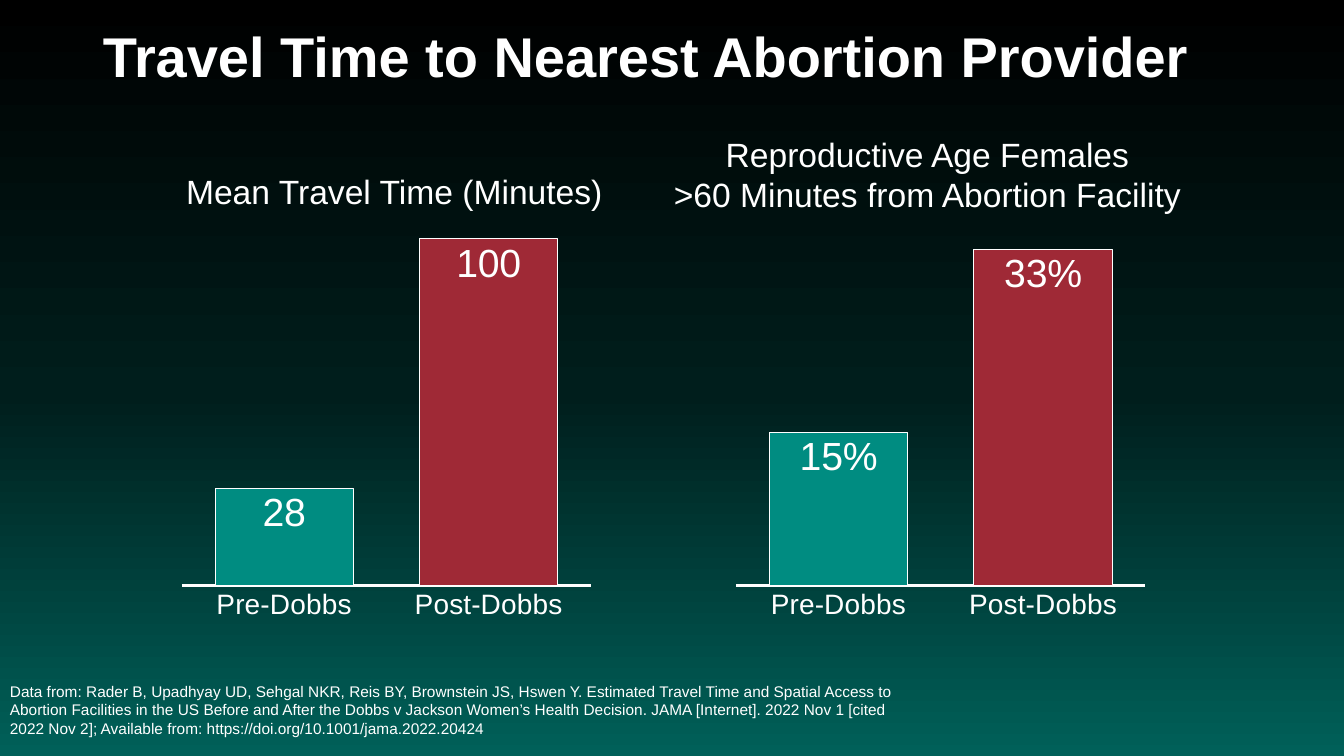
from copy import deepcopy
from lxml import etree
from pptx import Presentation
from pptx.chart.data import CategoryChartData
from pptx.dml.color import RGBColor
from pptx.enum import chart as ch, text as tx
from pptx.oxml import ns
from pptx.util import Cm, Pt

FONT, WHITE = "Arial", "FFFFFF"
BACKGROUND = [(0, "000000"), (0.52, "001E1C"), (1, "006059")]
TITLE = "Travel Time to Nearest Abortion Provider"
SOURCE = (
    "Data from: Rader B, Upadhyay UD, Sehgal NKR, Reis BY, Brownstein JS, Hswen Y. "
    "Estimated Travel Time and Spatial Access to Abortion Facilities in the US Before "
    "and After the Dobbs v Jackson Women’s Health Decision. JAMA [Internet]. 2022 Nov 1 "
    "[cited 2022 Nov 2]; Available from: https://doi.org/10.1001/jama.2022.20424"
)
CATEGORIES = ["Pre-Dobbs", "Post-Dobbs"]
BAR_COLOURS = ["008C81", "9F2936"]
# Boxes are left, top, width, height in centimetres
CHARTS = [
    dict(left=4.37, values=[28, 100], top_value=100, step=20, number_format="General",
         heading="Mean Travel Time (Minutes)", heading_box=(4.37, 4.17, 11.13, 1.27)),
    dict(left=18.34, values=[0.15, 0.33], top_value=0.34, step=0.05, number_format="0%",
         heading="Reproductive Age Females\n>60 Minutes from Abortion Facility",
         heading_box=(16.51, 3.25, 13.72, 2.31)),
]
CHART_TOP, CHART_WIDTH, CHART_HEIGHT = 5.82, 10.74, 10.03
PLOT = {"x": 0.02, "y": 0.02, "w": 0.96, "h": 0.87}


def colour(value):
    return RGBColor.from_string(value)


def style_font(font, size, bold=False):
    font.name, font.size, font.bold = FONT, Pt(size), bold
    font.color.rgb = colour(WHITE)


def fill_text(box, content, size, align, anchor, wrap=True, bold=False):
    frame = box.text_frame
    frame.text = content
    frame.word_wrap = wrap
    frame.auto_size = tx.MSO_AUTO_SIZE.NONE
    frame.vertical_anchor = anchor
    for para in frame.paragraphs:
        para.alignment = align
        for span in para.runs:
            style_font(span.font, size, bold)


def add_text(slide, place, *args, **kwargs):
    box = slide.shapes.add_textbox(*map(Cm, place))
    fill_text(box, *args, **kwargs)


def paint_background(slide):
    fill = slide.background.fill
    fill.gradient()
    fill.gradient_angle = 270
    stop_list = slide.element.xpath(".//a:gsLst")[0]
    stop_list.insert(1, deepcopy(stop_list[0]))
    for stop, (position, value) in zip(fill.gradient_stops, BACKGROUND):
        stop.position = position
        stop.color.rgb = colour(value)


def fix_plot_area(chart):
    """Pin the inner plot area to the fractions in PLOT."""
    area = chart.element.xpath(".//c:plotArea")[0]
    for old in area.findall(ns.qn("c:layout")):
        area.remove(old)
    layout = etree.Element(ns.qn("c:layout"))
    manual = etree.SubElement(layout, ns.qn("c:manualLayout"))
    settings = {"layoutTarget": "inner", "xMode": "edge", "yMode": "edge", **PLOT}
    for name, value in settings.items():
        etree.SubElement(manual, ns.qn(f"c:{name}")).set("val", str(value))
    area.insert(0, layout)


def add_bar_chart(slide, item):
    data = CategoryChartData(number_format=item["number_format"])
    data.categories = CATEGORIES
    data.add_series("Series 1", item["values"])
    place = (item["left"], CHART_TOP, CHART_WIDTH, CHART_HEIGHT)
    chart = slide.shapes.add_chart(
        ch.XL_CHART_TYPE.COLUMN_CLUSTERED, *map(Cm, place), data).chart
    chart.has_legend = chart.has_title = False
    style_font(chart.font, 20)
    fix_plot_area(chart)

    values = chart.value_axis
    values.minimum_scale, values.maximum_scale = 0, item["top_value"]
    values.major_unit = item["step"]
    values.has_major_gridlines = values.visible = False
    categories = chart.category_axis
    categories.major_tick_mark = ch.XL_TICK_MARK.NONE
    categories.format.line.color.rgb = colour(WHITE)
    categories.format.line.width = Pt(2)
    style_font(categories.tick_labels.font, 20)

    plot = chart.plots[0]
    plot.gap_width, plot.overlap, plot.vary_by_categories = 48, -27, False
    series = plot.series[0]
    for index, value in enumerate(BAR_COLOURS):
        bar = series.points[index].format
        bar.fill.solid()
        bar.fill.fore_color.rgb = colour(value)
        bar.line.color.rgb = colour(WHITE)
        bar.line.width = Pt(0.75)
    labels = series.data_labels
    labels.show_value = True
    labels.position = ch.XL_LABEL_POSITION.INSIDE_END
    labels.number_format = item["number_format"]
    labels.number_format_is_linked = False
    style_font(labels.font, 28)


def main():
    deck = Presentation()
    deck.slide_width, deck.slide_height = Cm(33.87), Cm(19.05)
    slide = deck.slides.add_slide(deck.slide_layouts[5])
    paint_background(slide)

    title = slide.shapes.title
    title.left, title.top, title.width, title.height = map(Cm, (2.34, 0.33, 29.21, 2.34))
    left, centre = tx.PP_ALIGN.LEFT, tx.PP_ALIGN.CENTER
    top, middle = tx.MSO_ANCHOR.TOP, tx.MSO_ANCHOR.MIDDLE
    fill_text(title, TITLE, 40, left, middle, bold=True)
    title.text_frame.paragraphs[0].line_spacing = 0.9

    add_text(slide, (0, 16.71, 22.86, 2.34), SOURCE, 11, left, middle)
    for item in CHARTS:
        add_bar_chart(slide, item)
        add_text(slide, item["heading_box"], item["heading"], 24, centre, top, wrap=False)
    deck.save("out.pptx")


if __name__ == "__main__":
    main()
